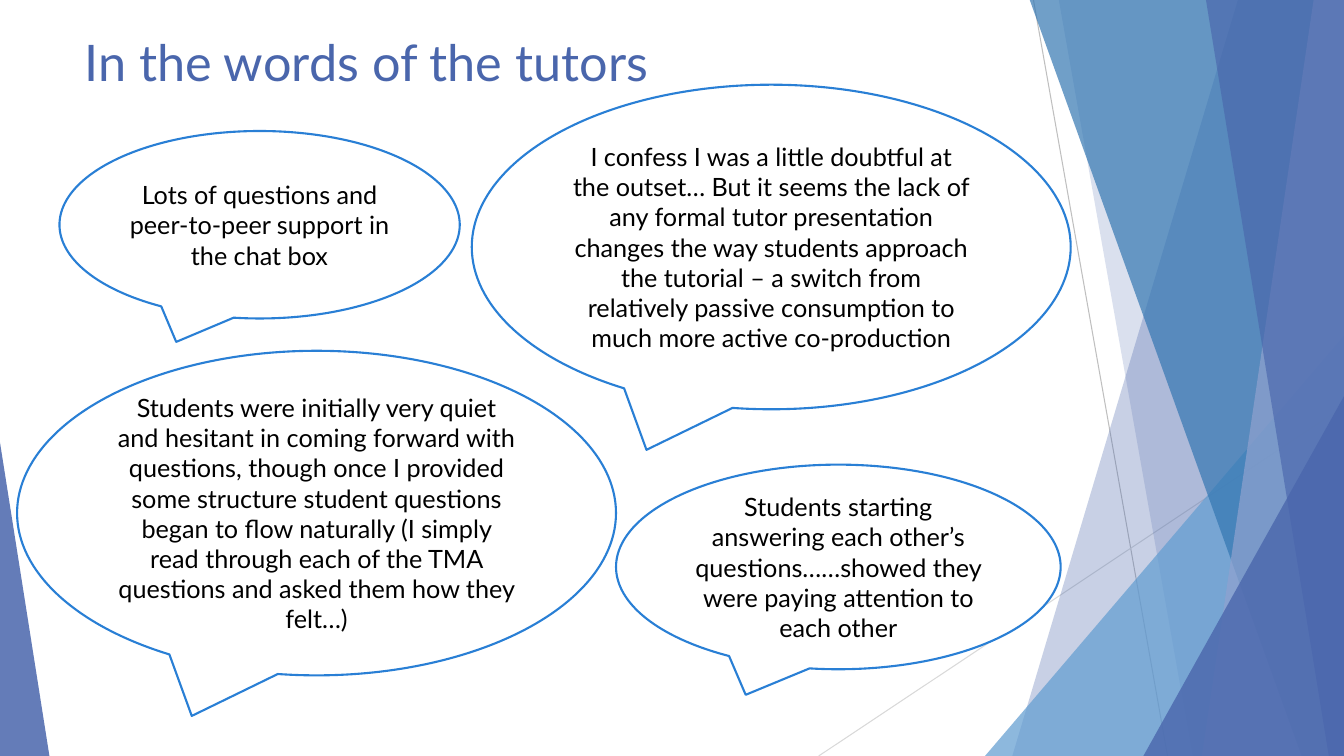
"""Build the slide of tutor quotes in speech bubbles over a faceted blue backdrop."""
import pptx
import pptx.dml.color
import pptx.enum.shapes
import pptx.enum.text
import pptx.oxml
import pptx.oxml.ns
import pptx.util

Inches = pptx.util.Inches
Pt = pptx.util.Pt
RGBColor = pptx.dml.color.RGBColor
MSO_SHAPE = pptx.enum.shapes.MSO_SHAPE
PP_ALIGN = pptx.enum.text.PP_ALIGN
MSO_ANCHOR = pptx.enum.text.MSO_ANCHOR

INDIGO = RGBColor(0x4A, 0x66, 0xAC)
SKY = RGBColor(0x62, 0x9D, 0xD1)
STEEL = RGBColor(0x34, 0x77, 0xB2)
LAVENDER = RGBColor(0x90, 0xA2, 0xCF)
OUTLINE = RGBColor(0x29, 0x7F, 0xD5)
GREY = RGBColor(0xBF, 0xBF, 0xBF)
PALE_GREY = RGBColor(0xD9, 0xD9, 0xD9)
WHITE = RGBColor(0xFF, 0xFF, 0xFF)
BLACK = RGBColor(0, 0, 0)

WIDTH, HEIGHT, FACET_TOP = 13.33, 7.5, -0.01
TITLE_FONT = {"name": "Lato", "size": Pt(36), "bold": False}
QUOTE_FONT = {"name": "Lato", "size": Pt(18)}
TITLE_FRAME = {"word_wrap": True, "vertical_anchor": MSO_ANCHOR.TOP}
QUOTE_FRAME = {"word_wrap": True, "vertical_anchor": MSO_ANCHOR.MIDDLE}

RAYS = [((10.25, 0), (11.58, HEIGHT), GREY), ((WIDTH, 4.03), (8.12, HEIGHT), PALE_GREY)]
BACK_FACETS = [(12.28, 10.04, INDIGO, 30), (10.5, 11.83, INDIGO, 20)]
FRONT_FACETS = [
    (10.21, 12.91, STEEL, 70),
    (13.03, 11.92, LAVENDER, 70),
    (11.96, 13.18, INDIGO, 65),
]
QUOTES = [
    ((0.59, 1.3, 3.97, 1.86),
     "Lots of questions and peer-to-peer support in the chat box"),
    ((4.68, 0.84, 5.94, 3.22),
     "I confess I was a little doubtful at the outset… But it seems the lack of any "
     "formal tutor presentation changes the way students approach the tutorial – a "
     "switch from relatively passive consumption to much more active co-production"),
    ((6.11, 4.61, 4.41, 2.03),
     "Students starting answering each other’s questions……showed they were paying "
     "attention to each other"),
    ((0.17, 3.48, 5.94, 3.22),
     "Students were initially very quiet and hesitant in coming forward with "
     "questions, though once I provided some structure student questions began to "
     "flow naturally (I simply read through each of the TMA questions and asked "
     "them how they felt…)"),
]


def set_values(target, values):
    """Set each named attribute of the target."""
    for name, value in values.items():
        setattr(target, name, value)


def write_text(sp, text, frame, font, color, align):
    """Write one formatted paragraph into a shape."""
    tf = sp.text_frame
    set_values(tf, frame)
    p = tf.paragraphs[0]
    p.alignment = align
    r = p.add_run()
    r.text = text
    set_values(r.font, font)
    r.font.color.rgb = color


def paint(sp, color, opacity):
    """Give a shape a translucent fill with no line or shadow."""
    sp.shadow.inherit = False
    sp.fill.solid()
    sp.fill.fore_color.rgb = color
    sp.line.fill.background()
    srgb = sp.fill._xPr.find(".//" + pptx.oxml.ns.qn("a:srgbClr"))
    alpha = pptx.oxml.parse_xml(
        f'<a:alpha {pptx.oxml.ns.nsdecls("a")} val="{opacity * 1000}"/>')
    srgb.append(alpha)


def add_ray(s, start, end, color):
    """Draw a thin straight line."""
    sp = s.shapes.add_connector(
        pptx.enum.shapes.MSO_CONNECTOR.STRAIGHT, *map(Inches, start + end))
    set_values(sp.line, {"width": Pt(0.75)})
    sp.line.color.rgb = color
    sp._element.spPr.append(
        pptx.oxml.parse_xml(f'<a:effectLst {pptx.oxml.ns.nsdecls("a")}/>'))


def add_facet(s, top_x, bottom_x, color, opacity):
    """Draw a full-height facet that runs to the right edge of the slide."""
    points = [(WIDTH, FACET_TOP), (WIDTH, HEIGHT), (bottom_x, HEIGHT)]
    outline = s.shapes.build_freeform(Inches(top_x), Inches(FACET_TOP))
    outline.add_line_segments([(Inches(x), Inches(y)) for x, y in points], close=True)
    paint(outline.convert_to_shape(), color, opacity)


def add_corner(s, box, apex, color, opacity):
    """Draw a right-angled triangle with its apex at the given share of the width."""
    sp = s.shapes.add_shape(MSO_SHAPE.ISOSCELES_TRIANGLE, *map(Inches, box))
    sp.adjustments[0] = apex
    paint(sp, color, opacity)


def add_bubble(s, box, text):
    """Draw a speech bubble that holds one quote."""
    sp = s.shapes.add_shape(MSO_SHAPE.OVAL_CALLOUT, *map(Inches, box))
    sp.shadow.inherit = False
    sp.fill.solid()
    sp.fill.fore_color.rgb = WHITE
    sp.line.color.rgb = OUTLINE
    sp.line.width = Pt(1.5)
    write_text(sp, text, QUOTE_FRAME, QUOTE_FONT, BLACK, PP_ALIGN.CENTER)


def add_title(s, text):
    """Place and format the title placeholder."""
    sp = s.shapes.title
    set_values(sp, {"left": Inches(0.74), "top": Inches(0.26),
                    "width": Inches(9.32), "height": Inches(0.83)})
    write_text(sp, text, TITLE_FRAME, TITLE_FONT, INDIGO, PP_ALIGN.LEFT)


def main():
    """Build and save the slide."""
    prs = pptx.Presentation()
    set_values(prs, {"slide_width": Inches(WIDTH), "slide_height": Inches(HEIGHT)})
    s = prs.slides.add_slide(prs.slide_layouts[5])
    for ray in RAYS:
        add_ray(s, *ray)
    for facet in BACK_FACETS:
        add_facet(s, *facet)
    add_corner(s, (9.77, 3.33, 3.56, 4.17), 1, SKY, 72)
    for facet in FRONT_FACETS:
        add_facet(s, *facet)
    add_corner(s, (11.34, 3.93, 1.99, 3.57), 1, INDIGO, 80)
    add_corner(s, (0, 4.39, 0.49, 3.11), 0, INDIGO, 85)
    add_title(s, "In the words of the tutors")
    for box, text in QUOTES:
        add_bubble(s, box, text)
    prs.save("out.pptx")


if __name__ == "__main__":
    main()
